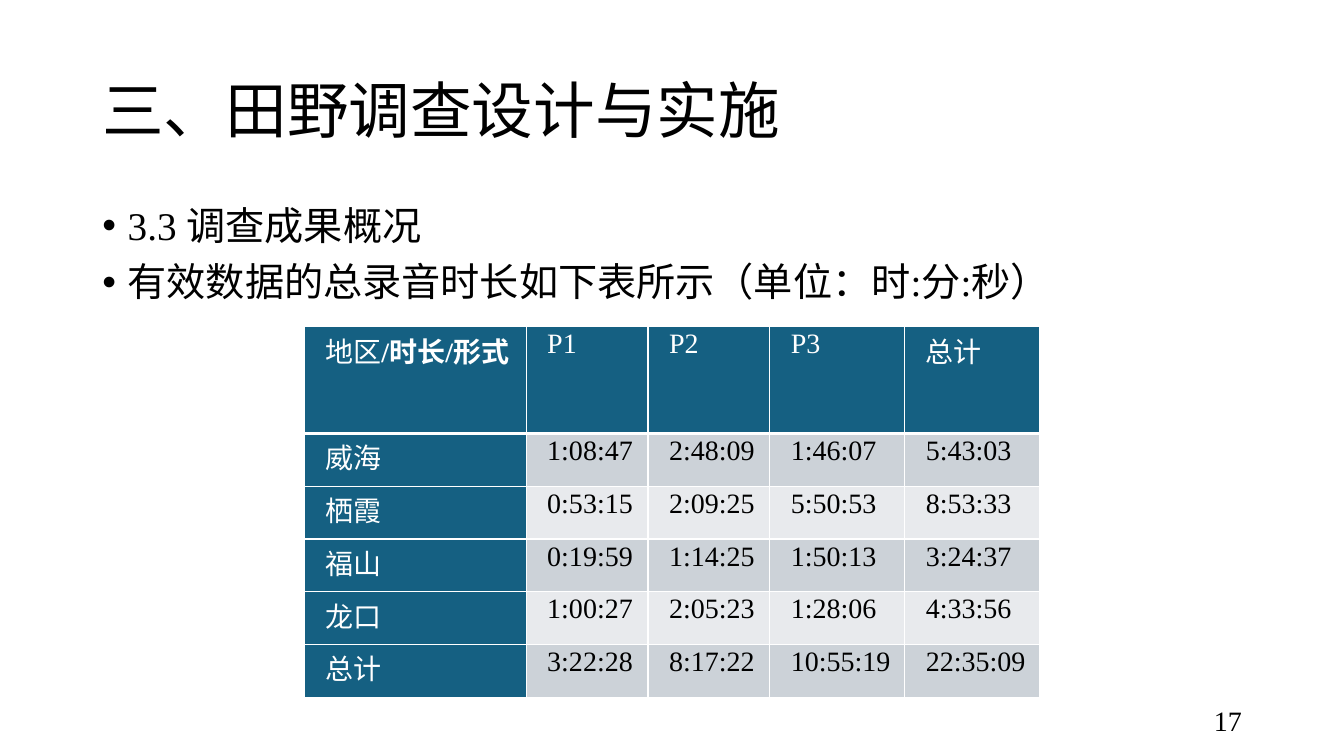
from lxml import etree
from pptx import Presentation, util as u
from pptx.dml.color import RGBColor
from pptx.enum import text
from pptx.oxml.ns import qn

BLACK = RGBColor(0x00, 0x00, 0x00)
WHITE = RGBColor(0xFF, 0xFF, 0xFF)
TEAL = RGBColor(0x15, 0x60, 0x82)
GREY = RGBColor(0xCC, 0xD2, 0xD8)
PALE = RGBColor(0xE8, 0xEA, 0xED)
LATIN, HAN = "Times New Roman", "Noto Sans CJK SC"

COLUMN_WIDTHS = [5.59, 3.07, 3.07, 3.4, 3.4]
ROW_HEIGHTS = [2.69] + [1.33] * 5
DURATIONS = [
    ["地区", "P1", "P2", "P3", "总计"],
    ["威海", "1:08:47", "2:48:09", "1:46:07", "5:43:03"],
    ["栖霞", "0:53:15", "2:09:25", "5:50:53", "8:53:33"],
    ["福山", "0:19:59", "1:14:25", "1:50:13", "3:24:37"],
    ["龙口", "1:00:27", "2:05:23", "1:28:06", "4:33:56"],
    ["总计", "3:22:28", "8:17:22", "10:55:19", "22:35:09"],
]


def apply(target, values):
    for name, value in values.items():
        setattr(target, name, value)


class SlideWriter:
    def __init__(self, page):
        self.page = page

    def span(self, para, words, size, color=BLACK, bold=False, latin=LATIN):
        span = para.add_run()
        span.text = words
        apply(span.font, {"size": u.Pt(size), "bold": bold, "name": latin})
        span.font.color.rgb = color
        east_asian = etree.SubElement(span.font._element, qn("a:ea"))
        east_asian.set("typeface", HAN)

    def indent(self, para, left, first):
        """Set the left margin and first-line indent of a paragraph in cm."""
        properties = para._p.get_or_add_pPr()
        properties.set("marL", str(u.Cm(left)))
        properties.set("indent", str(u.Cm(first)))
        return properties

    def text_box(self, place, lines, size, bullet=False, latin=LATIN,
                 anchor=text.MSO_ANCHOR.MIDDLE, **para_format):
        frame = self.page.shapes.add_textbox(*map(u.Cm, place)).text_frame
        apply(frame, {"word_wrap": True, "vertical_anchor": anchor})
        for number, line in enumerate(lines):
            para = frame.add_paragraph() if number else frame.paragraphs[0]
            apply(para, para_format)
            if bullet:
                properties = self.indent(para, 0.64, -0.64)
                font = etree.SubElement(properties, qn("a:buFont"))
                font.set("typeface", "Arial")
                etree.SubElement(properties, qn("a:buChar")).set("char", "•")
            self.span(para, line, size, latin=latin)

    def borders(self, cell, widths):
        """Draw white cell borders; widths maps each side to points."""
        properties = cell._tc.get_or_add_tcPr()
        for side, width in widths.items():
            line = etree.SubElement(properties, qn(f"a:ln{side}"))
            line.set("w", str(u.Pt(width)))
            fill = etree.SubElement(line, qn("a:solidFill"))
            etree.SubElement(fill, qn("a:srgbClr")).set("val", str(WHITE))

    def cell(self, cell, words, row, column):
        heading = row == 0 or column == 0
        apply(cell, {"margin_left": u.Cm(0.18), "margin_right": u.Cm(0.18),
                     "margin_top": 0, "margin_bottom": 0})
        self.borders(cell, {"L": 1, "R": 1, "T": 3 if row == 1 else 1,
                            "B": 3 if row == 0 else 1})
        cell.fill.solid()
        cell.fill.fore_color.rgb = TEAL if heading else (PALE, GREY)[row % 2]
        para = cell.text_frame.paragraphs[0]
        para.line_spacing = 1.07
        self.indent(para, 0, 0.35)
        color = WHITE if heading else BLACK
        self.span(para, words, 20, color)
        if row == column == 0:
            self.span(para, "/时长/形式", 20, color, bold=True)

    def table(self, left, top, widths, heights, values):
        place = map(u.Cm, (left, top, sum(widths), sum(heights)))
        table = self.page.shapes.add_table(
            len(heights), len(widths), *place).table
        for column, width in zip(table.columns, widths):
            column.width = u.Cm(width)
        for row, height in zip(table.rows, heights):
            row.height = u.Cm(height)
        for row, line in enumerate(values):
            for column, words in enumerate(line):
                self.cell(table.cell(row, column), words, row, column)


def main():
    deck = Presentation()
    apply(deck, {"slide_width": u.Cm(33.87), "slide_height": u.Cm(19.05)})
    writer = SlideWriter(deck.slides.add_slide(deck.slide_layouts[6]))
    writer.text_box((2.33, 1.02, 29.21, 3.68), ["三、田野调查设计与实施"], 44,
                    latin=HAN, line_spacing=0.9)
    writer.text_box((2.33, 5.08, 29.21, 12.09),
                    ["3.3 调查成果概况",
                     "有效数据的总录音时长如下表所示（单位：时:分:秒）"], 28,
                    bullet=True, anchor=text.MSO_ANCHOR.TOP,
                    line_spacing=0.9, space_before=u.Pt(10))
    writer.table(7.67, 8.23, COLUMN_WIDTHS, ROW_HEIGHTS, DURATIONS)
    writer.text_box((23.93, 17.65, 7.62, 1.02), ["17"], 20,
                    alignment=text.PP_ALIGN.RIGHT)
    deck.save("out.pptx")


if __name__ == "__main__":
    main()
